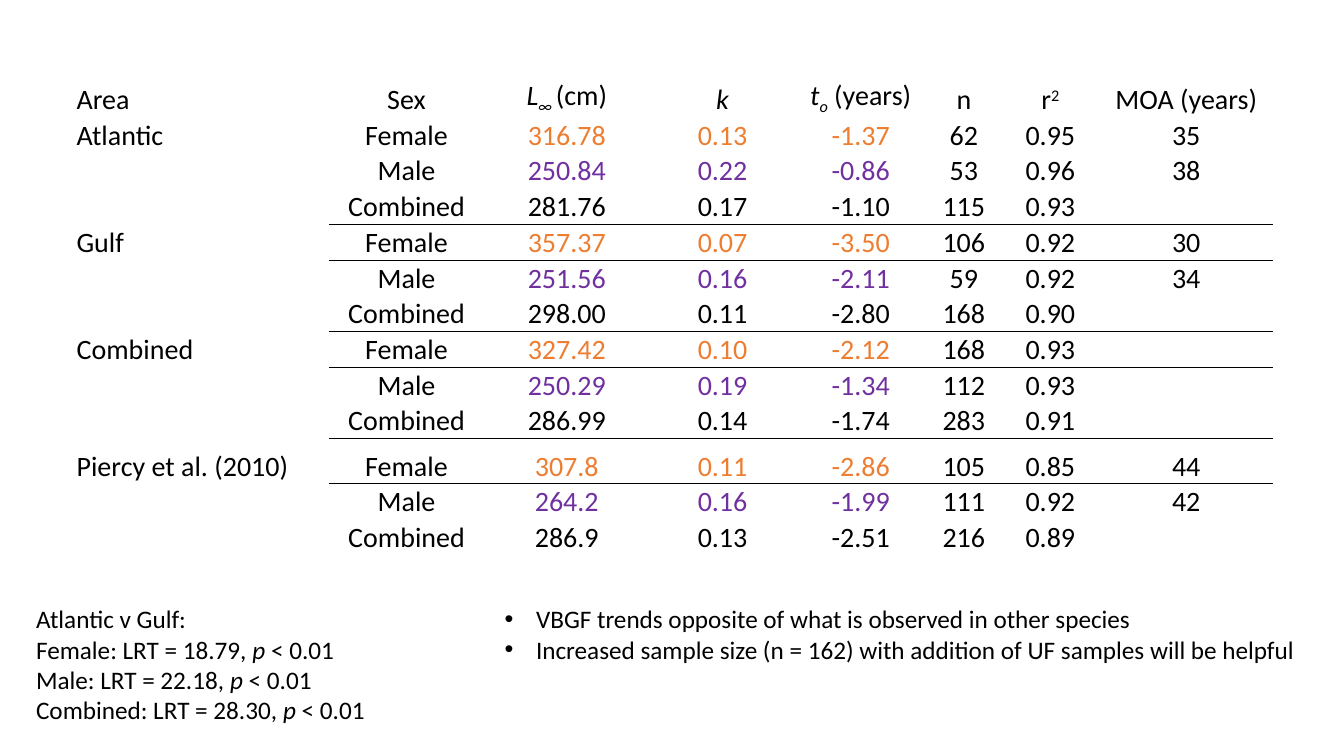
"""Build the slide of growth parameters by area and sex."""
import pptx
import pptx.dml.color
import pptx.enum.text
import pptx.oxml
import pptx.oxml.ns
import pptx.util

Cm = pptx.util.Cm
BLACK, ORANGE, PURPLE = "000000", "ED7D31", "7030A0"


def color(hex_value):
    """Return the colour for a hex string."""
    return pptx.dml.color.RGBColor.from_string(hex_value)


def write(paragraph, segments, size, hex_value=BLACK):
    """Fill a paragraph with (text, italic, baseline) segments."""
    paragraph.font.name = "Calibri"
    paragraph.font.size = pptx.util.Pt(size)
    paragraph.font.color.rgb = color(hex_value)
    for text, italic, baseline in segments:
        run = paragraph.add_run()
        run.text = text
        if italic:
            run.font.italic = True
        if baseline:
            run.font._element.set("baseline", str(baseline * 1000))


headings = [
    [("Area", False, 0)],
    [("Sex", False, 0)],
    [("L", True, 0), ("∞ ", True, -25), ("(cm)", False, 0)],
    [("k", True, 0)],
    [("t", True, 0), ("o", True, -25), (" (years)", False, 0)],
    [("n", False, 0)],
    [("r", False, 0), ("2", False, 30)],
    [("MOA (years)", False, 0)],
]
estimates = [
    ("Atlantic", "Female", "316.78", "0.13", "-1.37", "62", "0.95", "35"),
    ("", "Male", "250.84", "0.22", "-0.86", "53", "0.96", "38"),
    ("", "Combined", "281.76", "0.17", "-1.10", "115", "0.93", ""),
    ("Gulf", "Female", "357.37", "0.07", "-3.50", "106", "0.92", "30"),
    ("", "Male", "251.56", "0.16", "-2.11", "59", "0.92", "34"),
    ("", "Combined", "298.00", "0.11", "-2.80", "168", "0.90", ""),
    ("Combined", "Female", "327.42", "0.10", "-2.12", "168", "0.93", ""),
    ("", "Male", "250.29", "0.19", "-1.34", "112", "0.93", ""),
    ("", "Combined", "286.99", "0.14", "-1.74", "283", "0.91", ""),
    ("Piercy et al. (2010)", "Female", "307.8", "0.11", "-2.86", "105", "0.85", "44"),
    ("", "Male", "264.2", "0.16", "-1.99", "111", "0.92", "42"),
    ("", "Combined", "286.9", "0.13", "-2.51", "216", "0.89", ""),
]
column_widths = [6.4, 3.89, 4.19, 3.66, 3.3, 1.9, 2.46, 4.39]
row_heights = [1.78] + [0.9] * 9 + [1.14] + [0.9] * 2
sex_colors = {"Female": ORANGE, "Male": PURPLE}
parameter_columns = (2, 3, 4)
divider_sides = {3: "lnB", 4: "lnT", 6: "lnB", 7: "lnT", 9: "lnB", 10: "lnT"}

presentation = pptx.Presentation()
presentation.slide_width = Cm(33.87)
presentation.slide_height = Cm(19.05)
slide = presentation.slides.add_slide(presentation.slide_layouts[6])

growth_frame = slide.shapes.add_table(
    len(row_heights), len(column_widths),
    Cm(1.9), Cm(1.17), Cm(sum(column_widths)), Cm(sum(row_heights)))
growth = growth_frame.table
growth.first_row = False
growth.horz_banding = False
no_grid_style = growth._tbl.tblPr.find(pptx.oxml.ns.qn("a:tableStyleId"))
no_grid_style.text = "{2D5ABB26-0587-4C30-8999-92F81FD0307C}"
for column, width in zip(growth.columns, column_widths):
    column.width = Cm(width)
for row, height in zip(growth.rows, row_heights):
    row.height = Cm(height)

rows = [headings] + [[[(value, False, 0)] for value in record] for record in estimates]
for row_index, record in enumerate(rows):
    sex = record[1][0][0]
    for column_index, segments in enumerate(record):
        cell = growth.cell(row_index, column_index)
        cell.margin_left = cell.margin_right = cell.margin_top = Cm(0.03)
        cell.margin_bottom = 0
        cell.vertical_anchor = pptx.enum.text.MSO_ANCHOR.BOTTOM
        cell.fill.background()
        paragraph = cell.text_frame.paragraphs[0]
        if column_index:
            paragraph.alignment = pptx.enum.text.PP_ALIGN.CENTER
        tint = sex_colors.get(sex, BLACK) if column_index in parameter_columns else BLACK
        write(paragraph, [part for part in segments if part[0]], 20, tint)
        if column_index and row_index in divider_sides:
            side = divider_sides[row_index]
            cell._tc.get_or_add_tcPr().insert(0, pptx.oxml.parse_xml(
                f'<a:{side} {pptx.oxml.ns.nsdecls("a")} w="6350"><a:solidFill>'
                f'<a:srgbClr val="{BLACK}"/></a:solidFill></a:{side}>'))

likelihood_tests = [[("Atlantic v Gulf:", False, 0)]]
for sex, ratio in (("Female", "18.79"), ("Male", "22.18"), ("Combined", "28.30")):
    likelihood_tests.append(
        [(f"{sex}: LRT = {ratio}, ", False, 0), ("p", True, 0), (" < 0.01", False, 0)])
findings = [
    [("VBGF trends opposite of what is observed in other species", False, 0)],
    [("Increased sample size (n = 162) with addition of UF samples will be helpful", False, 0)],
]
notes = [
    (0.66, 9.37, 3.33, likelihood_tests, False),
    (12.47, 21.41, 1.8, findings, True),
]
for left, width, height, lines, bulleted in notes:
    frame = slide.shapes.add_textbox(Cm(left), Cm(15.09), Cm(width), Cm(height)).text_frame
    frame.word_wrap = True
    for index, segments in enumerate(lines):
        paragraph = frame.add_paragraph() if index else frame.paragraphs[0]
        write(paragraph, segments, 18)
        if bulleted:
            properties = paragraph._p.get_or_add_pPr()
            properties.set("marL", str(Cm(0.79)))
            properties.set("indent", str(Cm(-0.79)))
            for offset, bullet in enumerate(('buFont typeface="Arial"', 'buChar char="•"')):
                properties.insert(offset, pptx.oxml.parse_xml(
                    f'<a:{bullet} {pptx.oxml.ns.nsdecls("a")}/>'))

presentation.save("out.pptx")
